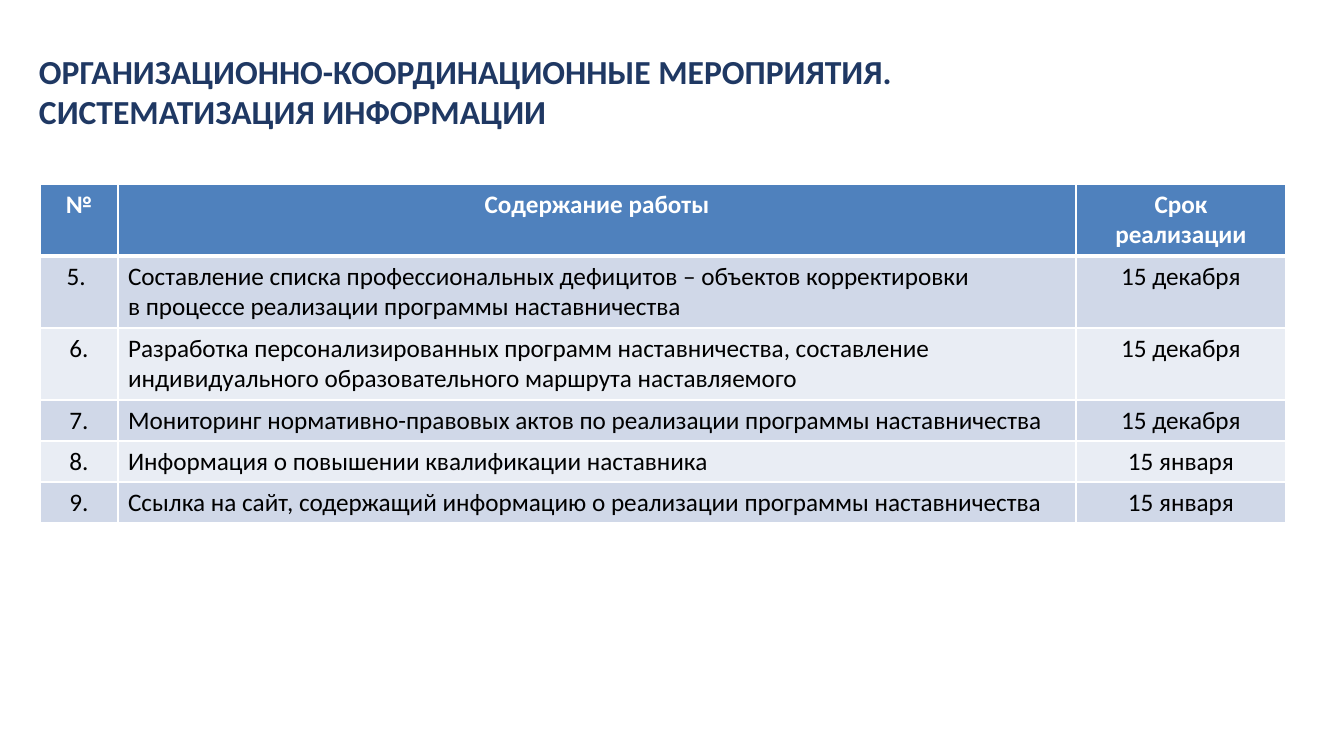
import pptx
import pptx.dml.color
import pptx.enum.text
import pptx.oxml
import pptx.oxml.ns
import pptx.util

TITLE = "ОРГАНИЗАЦИОННО-КООРДИНАЦИОННЫЕ МЕРОПРИЯТИЯ. \vСИСТЕМАТИЗАЦИЯ ИНФОРМАЦИИ"
ROWS = [
    ("№", "Содержание работы", "Срок реализации"),
    ("5. ", "Составление списка профессиональных дефицитов – объектов корректировки\n"
            "в процессе реализации программы наставничества", "15 декабря"),
    ("6.", "Разработка персонализированных программ наставничества, составление "
           "индивидуального образовательного маршрута наставляемого", "15 декабря"),
    ("7.", "Мониторинг нормативно-правовых актов по реализации программы наставничества",
     "15 декабря"),
    ("8.", "Информация о повышении квалификации наставника", "15 января"),
    ("9.", "Ссылка на сайт, содержащий информацию о реализации программы наставничества",
     "15 января"),
]
COLUMN_WIDTHS = [78, 958, 210]
ROW_HEIGHTS = [72, 72, 72, 41, 41, 41]
LEFT, TITLE_TOP, TABLE_TOP = 39, 51, 184
HEADER_FILL, BAND_FILLS = "4F81BD", ["D0D8E8", "E9EDF4"]
ALIGN = pptx.enum.text.PP_ALIGN


def px(length):
    return pptx.util.Emu(round(length * 914400 / 100.8))


def color(value):
    return pptx.dml.color.RGBColor.from_string(value)


def write(frame, text, size=18, fill="000000", bold=False, align=ALIGN.LEFT):
    frame.word_wrap = True
    frame.text = text
    for paragraph in frame.paragraphs:
        paragraph.alignment = align
        for run in paragraph.runs:
            run.font.name = "Calibri"
            run.font.size = pptx.util.Pt(size)
            run.font.bold = bold
            run.font.color.rgb = color(fill)


def set_borders(cell, bottom, top):
    properties = cell._tc.get_or_add_tcPr()
    widths = {"lnL": 1, "lnR": 1, "lnT": top, "lnB": bottom}
    for position, (tag, width) in enumerate(widths.items()):
        line = pptx.oxml.parse_xml(
            f'<a:{tag} {pptx.oxml.ns.nsdecls("a")} w="{pptx.util.Pt(width)}">'
            '<a:solidFill><a:srgbClr val="FFFFFF"/></a:solidFill>'
            f'</a:{tag}>')
        properties.insert(position, line)


def add_title(slide):
    box = slide.shapes.add_textbox(px(LEFT), px(TITLE_TOP), px(1237), px(82))
    frame = box.text_frame
    frame.margin_left = frame.margin_right = frame.margin_top = frame.margin_bottom = 0
    write(frame, TITLE, size=24, fill="1F3863", bold=True)


def add_schedule(slide):
    table = slide.shapes.add_table(
        len(ROWS), len(COLUMN_WIDTHS), px(LEFT + 1), px(TABLE_TOP),
        px(sum(COLUMN_WIDTHS)), px(sum(ROW_HEIGHTS))).table
    for column, width in zip(table.columns, COLUMN_WIDTHS):
        column.width = px(width)
    for index, (row, height, texts) in enumerate(zip(table.rows, ROW_HEIGHTS, ROWS)):
        row.height = px(height)
        header = index == 0
        for column, (cell, text) in enumerate(zip(row.cells, texts)):
            cell.fill.solid()
            cell.fill.fore_color.rgb = color(
                HEADER_FILL if header else BAND_FILLS[(index - 1) % 2])
            set_borders(cell, bottom=3 if header else 1, top=3 if index == 1 else 1)
            write(cell.text_frame, text, bold=header,
                  fill="FFFFFF" if header else "000000",
                  align=ALIGN.CENTER if header or column != 1 else ALIGN.LEFT)


def main():
    presentation = pptx.Presentation()
    presentation.slide_width, presentation.slide_height = px(1344), px(756)
    slide = presentation.slides.add_slide(presentation.slide_layouts[6])
    add_title(slide)
    add_schedule(slide)
    presentation.save("out.pptx")


if __name__ == "__main__":
    main()
